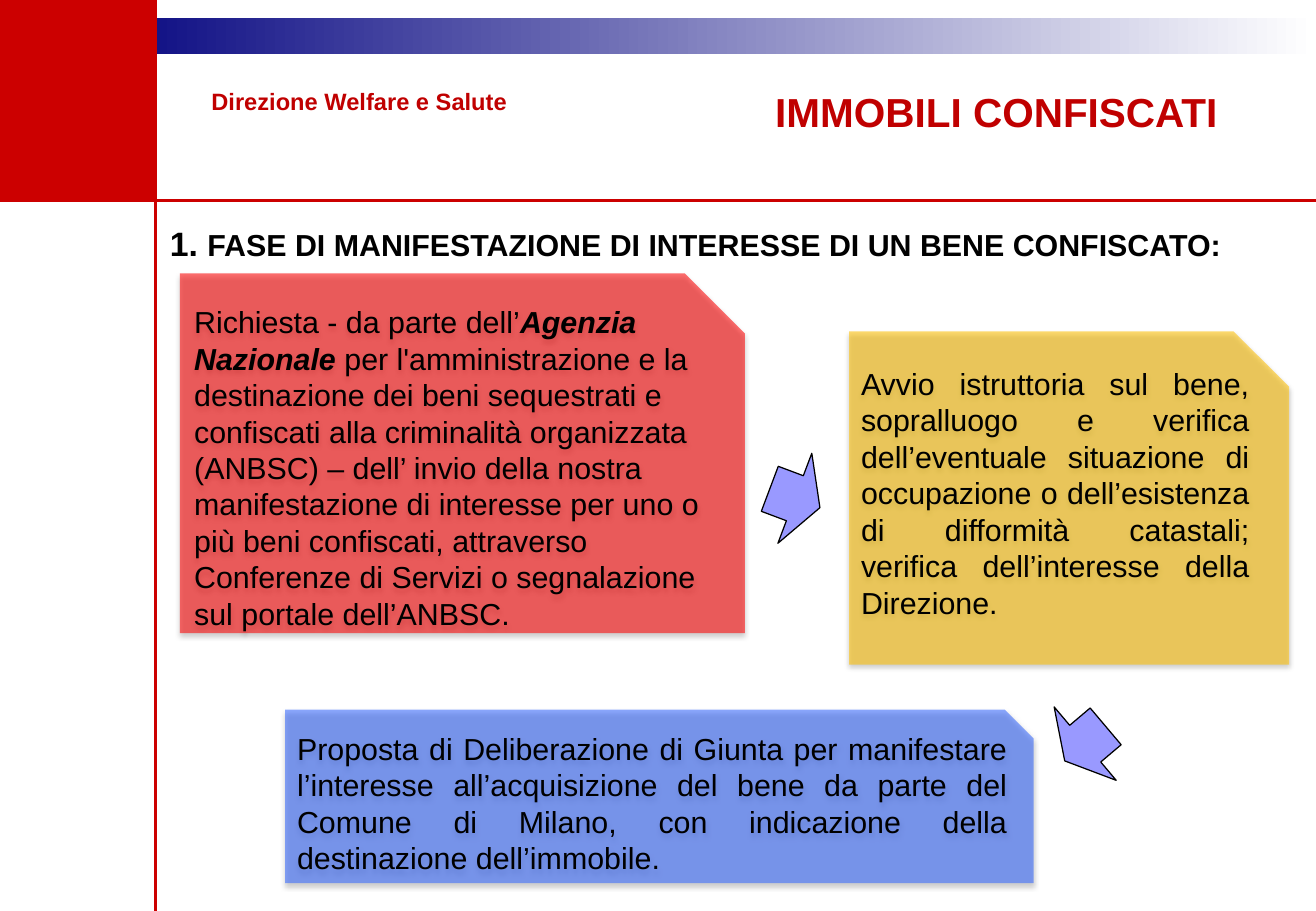
from lxml.etree import SubElement
from pptx import Presentation
from pptx.dml.color import RGBColor
from pptx.enum.shapes import MSO_CONNECTOR, MSO_SHAPE
from pptx.enum.text import MSO_ANCHOR, PP_ALIGN
from pptx.oxml import parse_xml
from pptx.oxml.ns import nsdecls, qn
from pptx.util import Cm, Pt

COLORS = {
    "red": "CC0000",
    "heading": "C00000",
    "navy": "00007D",
    "white": "FFFFFF",
    "black": "000000",
    "request": "FF0000",
    "review": "FFC000",
    "proposal": "3366FF",
    "arrow": "9999FF",
}
SLIDE_WIDTH, SLIDE_HEIGHT = 27.51, 19.05
BAND_RIGHT, BAND_BOTTOM = 3.25, 4.19
SHADOW = (
    f'<a:effectLst {nsdecls("a")}><a:outerShdw blurRad="{Pt(3.1)}" dist="{Pt(1.8)}" '
    'dir="5400000" rotWithShape="0"><a:srgbClr val="000000"><a:alpha val="35000"/>'
    "</a:srgbClr></a:outerShdw></a:effectLst>"
)
REQUEST = [
    ("Richiesta - da parte dell’", False),
    ("Agenzia Nazionale", True),
    (" per l'amministrazione e la destinazione dei beni sequestrati e confiscati "
     "alla criminalità organizzata (ANBSC) – dell’ invio della nostra manifestazione "
     "di interesse per uno o più beni confiscati, attraverso Conferenze di Servizi o "
     "segnalazione sul portale dell’ANBSC.", False),
]
REVIEW = [
    ("Avvio istruttoria sul bene, sopralluogo e verifica dell’eventuale situazione di "
     "occupazione o dell’esistenza di difformità catastali; verifica dell’interesse "
     "della Direzione.", False),
]
PROPOSAL = [
    ("Proposta di Deliberazione di Giunta per manifestare l’interesse all’acquisizione "
     "del bene da parte del Comune di Milano, con indicazione della destinazione "
     "dell’immobile.", False),
]


def color(name):
    return RGBColor.from_string(COLORS[name])


def lengths(box):
    return [Cm(value) for value in box]


def format_paragraph(paragraph, size, name, bold=None, align=PP_ALIGN.LEFT):
    paragraph.alignment = align
    paragraph.font.size = Pt(size)
    paragraph.font.name = "Arial"
    paragraph.font.bold = bold
    paragraph.font.color.rgb = color(name)


def add_shape(slide, kind, box, fill=None):
    shape = slide.shapes.add_shape(kind, *lengths(box))
    shape.shadow.inherit = False
    shape.line.fill.background()
    if fill:
        shape.fill.solid()
        shape.fill.fore_color.rgb = color(fill)
    return shape


def add_gradient_bar(slide, box):
    bar = add_shape(slide, MSO_SHAPE.RECTANGLE, box)
    bar.fill.gradient()
    bar.fill.gradient_angle = 0
    for stop, name in zip(bar.fill.gradient_stops, ("navy", "white")):
        stop.color.rgb = color(name)


def add_rule(slide, *ends):
    rule = slide.shapes.add_connector(MSO_CONNECTOR.STRAIGHT, *lengths(ends))
    rule.line.color.rgb = color("red")
    rule.line.width = Pt(1.5)
    SubElement(rule._element.spPr, qn("a:effectLst"))


def add_label(slide, box, text, size, name, align=PP_ALIGN.LEFT):
    label = slide.shapes.add_textbox(*lengths(box))
    label.text_frame.word_wrap = True
    paragraph = label.text_frame.paragraphs[0]
    paragraph.text = text
    format_paragraph(paragraph, size, name, bold=True, align=align)
    return paragraph


def add_card(slide, box, fill, runs, align=PP_ALIGN.JUSTIFY):
    card = add_shape(slide, MSO_SHAPE.SNIP_1_RECTANGLE, box, fill)
    properties = card._element.spPr
    SubElement(next(properties.iter(qn("a:srgbClr"))), qn("a:alpha"), val="56000")
    properties.replace(properties.find(qn("a:effectLst")), parse_xml(SHADOW))
    frame = card.text_frame
    frame.word_wrap = True
    frame.vertical_anchor = MSO_ANCHOR.TOP
    paragraph = frame.paragraphs[0]
    format_paragraph(paragraph, 18, "black", align=align)
    for text, emphasis in runs:
        run = paragraph.add_run()
        run.text = text
        if emphasis:
            run.font.bold = run.font.italic = True
    return frame


def add_arrow(slide, left, top, rotation):
    arrow = add_shape(slide, MSO_SHAPE.UP_ARROW, (left, top, 2.01, 1.12), "arrow")
    arrow.rotation = rotation
    arrow.line.color.rgb = color("black")
    arrow.line.width = Pt(0.75)


def set_title(slide, box, text):
    title = slide.shapes.title
    title.left, title.top, title.width, title.height = lengths(box)
    title.text_frame.vertical_anchor = MSO_ANCHOR.TOP
    paragraph = title.text_frame.paragraphs[0]
    paragraph.text = text
    format_paragraph(paragraph, 24, "heading", bold=True, align=PP_ALIGN.JUSTIFY)


def main():
    presentation = Presentation()
    presentation.slide_width = Cm(SLIDE_WIDTH)
    presentation.slide_height = Cm(SLIDE_HEIGHT)
    slide = presentation.slides.add_slide(presentation.slide_layouts[5])

    add_gradient_bar(slide, (1.24, 0.38, SLIDE_WIDTH - 1.24, 0.76))
    add_shape(slide, MSO_SHAPE.RECTANGLE, (0, 0, BAND_RIGHT, BAND_BOTTOM), "red")
    add_rule(slide, 0, BAND_BOTTOM, SLIDE_WIDTH, BAND_BOTTOM)
    add_rule(slide, BAND_RIGHT, SLIDE_HEIGHT, BAND_RIGHT, 0)

    set_title(slide, (15.95, 1.7, 9.8, 1.3), "IMMOBILI CONFISCATI")
    add_label(slide, (4.17, 1.7, 7.37, 0.86), "Direzione Welfare e Salute", 14,
              "heading", PP_ALIGN.JUSTIFY)
    phase = add_label(slide, (3.3, 4.54, 24.16, 1.12), "1. ", 18, "black")
    phase.runs[0].font.size = Pt(20)
    phase.add_run().text = "FASE DI MANIFESTAZIONE DI INTERESSE DI UN BENE CONFISCATO:"

    request = add_card(slide, (3.76, 5.72, 11.81, 7.52), "request", REQUEST, PP_ALIGN.LEFT)
    request.margin_left, request.margin_right = Cm(0.3), Cm(0.1)
    request.margin_top = request.margin_bottom = 0
    add_card(slide, (17.75, 6.93, 9.2, 6.97), "review", REVIEW)
    add_card(slide, (5.96, 14.84, 15.65, 3.63), "proposal", PROPOSAL)
    add_arrow(slide, 15.61, 9.86, 110.6)
    add_arrow(slide, 21.68, 14.99, 229.8)

    presentation.save("out.pptx")


if __name__ == "__main__":
    main()
